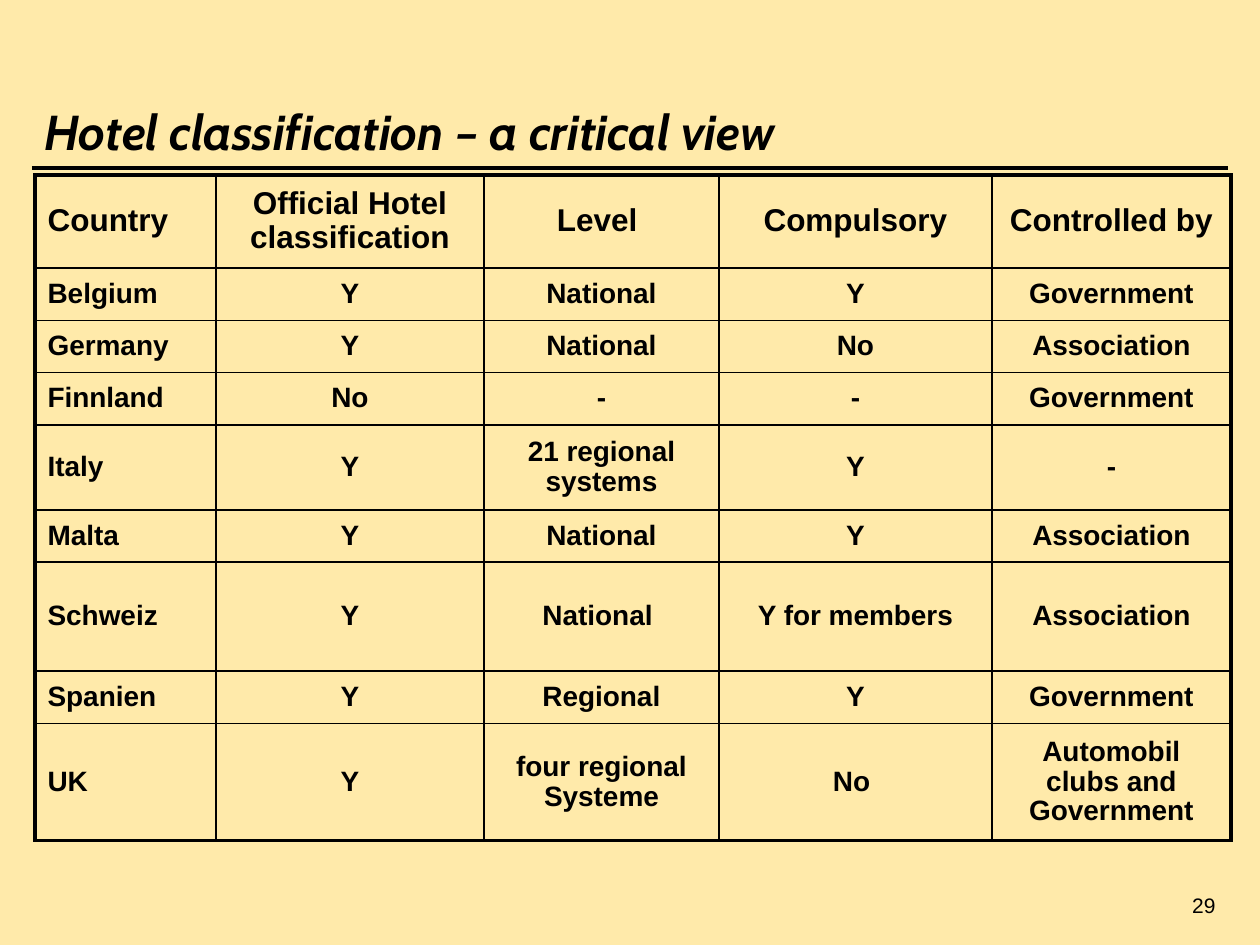
from lxml import etree
from pptx import Presentation
from pptx import util as u
from pptx.dml.color import RGBColor
from pptx.enum import shapes, text
from pptx.oxml.ns import qn

SCALE = 914400 // 126
INK = "000000"
THIN, THICK = 1, 2.25
COLS = [181, 268, 235, 273, 239]
ROWS = [90, 52, 51, 51, 82, 51, 109, 52, 113]
HOTELS = [
    ["Country", "Official Hotel classification", "Level ", "Compulsory", "Controlled by"],
    ["Belgium", "Y", "National", "Y", "Government"],
    ["Germany", "Y", "National", "No", "Association"],
    ["Finnland", "No", "-", "-", "Government"],
    ["Italy", "Y", "21 regional systems", "Y", "-"],
    ["Malta", "Y", "National", "Y", "Association"],
    ["Schweiz", "Y", "National ", "Y for members", "Association"],
    ["Spanien", "Y", "Regional", "Y", "Government"],
    ["UK", "Y", "four regional Systeme", "No ", "Automobil clubs and Government"],
]


def px(n):
    """Turn pixels into EMU."""
    return u.Emu(n * SCALE)


def color(code):
    """Turn a hex string into a colour."""
    return RGBColor.from_string(code)


def style(para, size, face="Arial", bold=False, slant=False, align=text.PP_ALIGN.LEFT):
    """Set the font and alignment of a paragraph."""
    font = para.font
    font.name, font.size = face, u.Pt(size)
    font.bold, font.italic = bold, slant
    font.color.rgb = color(INK)
    para.alignment = align


def add_text(slide, words, box, anchor, **look):
    """Add a wrapped text box with one paragraph."""
    frame = slide.shapes.add_textbox(*map(px, box)).text_frame
    frame.word_wrap = True
    frame.vertical_anchor = anchor
    frame.text = words
    style(frame.paragraphs[0], **look)


def add_rule(slide, left, right, y):
    """Add a horizontal rule without a shadow."""
    rule = slide.shapes.add_connector(
        shapes.MSO_CONNECTOR.STRAIGHT, px(left), px(y), px(right), px(y))
    rule.line.color.rgb = color(INK)
    rule.line.width = u.Pt(THICK)
    etree.SubElement(rule._element.spPr, qn("a:effectLst"))


def add_edge(cell, side, width):
    """Draw one border of a cell."""
    props = cell._tc.get_or_add_tcPr()
    edge = etree.SubElement(props, qn(f"a:ln{side}"), w=str(u.Pt(width)))
    fill = etree.SubElement(edge, qn("a:solidFill"))
    etree.SubElement(fill, qn("a:srgbClr"), val=INK)


def fill_cell(cell, words, row, col):
    """Write, align and frame one cell."""
    outer = {"L": col == 0, "R": col == len(COLS) - 1,
             "T": row == 0, "B": row == len(ROWS) - 1}
    for side, thick in outer.items():
        add_edge(cell, side, THICK if thick else THIN)
    cell.fill.background()
    cell.vertical_anchor = text.MSO_ANCHOR.MIDDLE
    cell.margin_left = cell.margin_right = u.Inches(0.1)
    cell.margin_top = cell.margin_bottom = u.Inches(0.08)
    cell.text = words
    para = cell.text_frame.paragraphs[0]
    para.line_spacing = 0.96
    style(para, 16 if row else 18, bold=True,
          align=text.PP_ALIGN.CENTER if col else text.PP_ALIGN.LEFT)


def add_grid(slide, left, top):
    """Add the table of hotel classifications."""
    grid = slide.shapes.add_table(
        len(ROWS), len(COLS), px(left), px(top), px(sum(COLS)), px(sum(ROWS))).table
    grid.first_row = grid.horz_banding = False
    for col, width in zip(grid.columns, COLS):
        col.width = px(width)
    for row, height in zip(grid.rows, ROWS):
        row.height = px(height)
    for r, line in enumerate(HOTELS):
        for c, words in enumerate(line):
            fill_cell(grid.cell(r, c), words, r, c)


def main():
    """Build and save the slide."""
    deck = Presentation()
    deck.slide_width, deck.slide_height = px(1260), px(945)
    slide = deck.slides.add_slide(deck.slide_layouts[6])
    back = slide.background.fill
    back.solid()
    back.fore_color.rgb = color("FFEAAA")
    add_rule(slide, 94, 1166, 168)
    add_rule(slide, 32, 1228, 168)
    add_text(slide, "29", (966, 861, 262, 63), text.MSO_ANCHOR.BOTTOM,
             size=12, align=text.PP_ALIGN.RIGHT)
    add_text(slide, "Hotel classification – a critical view", (32, 94, 1184, 74),
             text.MSO_ANCHOR.MIDDLE, size=28, face="Cabin", bold=True, slant=True)
    add_grid(slide, 35, 175)
    deck.save("out.pptx")


if __name__ == "__main__":
    main()
